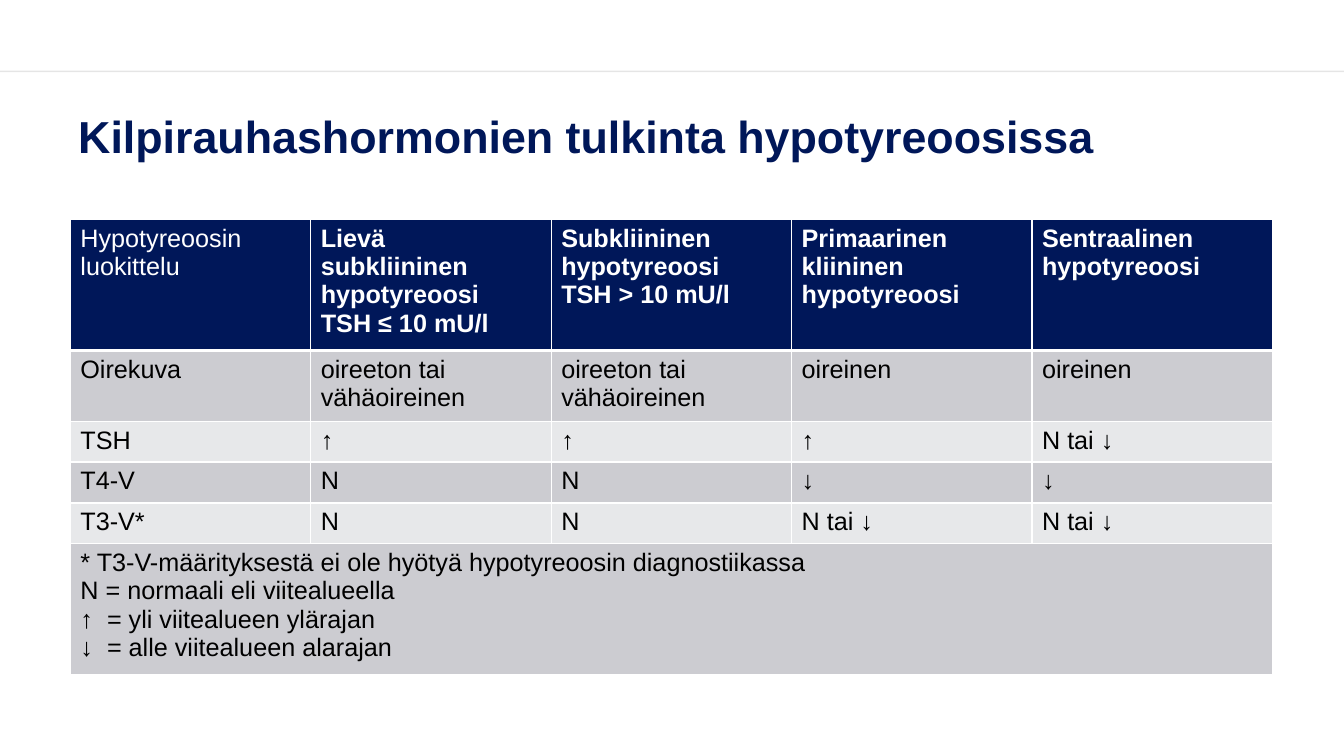
from dataclasses import dataclass

from lxml.etree import SubElement
from pptx import Presentation
from pptx.dml.color import RGBColor
from pptx.enum.shapes import MSO_CONNECTOR
from pptx.enum.text import MSO_ANCHOR
from pptx.oxml.ns import qn
from pptx.util import Pt

PX = 9525


@dataclass(frozen=True)
class Theme:
    """Colours, font and type sizes of the slide."""
    font: str = "Arial"
    navy: str = "001759"
    white: str = "FFFFFF"
    black: str = "000000"
    bands: tuple = ("E7E8EA", "CCCCD1")
    title: int = 32
    body: int = 18
    rule_opacity: int = 10


THEME = Theme()
TITLE = "Kilpirauhashormonien tulkinta hypotyreoosissa"
ROWS = [
    ["Hypotyreoosin luokittelu",
     "Lievä\nsubkliininen\nhypotyreoosi\nTSH ≤ 10 mU/l",
     "Subkliininen\nhypotyreoosi\nTSH > 10 mU/l",
     "Primaarinen kliininen\nhypotyreoosi",
     "Sentraalinen\nhypotyreoosi"],
    ["Oirekuva", "oireeton tai\nvähäoireinen", "oireeton tai\nvähäoireinen",
     "oireinen", "oireinen"],
    ["TSH", "↑", "↑", "↑", "N tai ↓"],
    ["T4-V", "N", "N", "↓", "↓"],
    ["T3-V*", "N", "N", "N tai ↓", "N tai ↓"],
    ["* T3-V-määrityksestä ei ole hyötyä hypotyreoosin diagnostiikassa\n"
     "N = normaali eli viitealueella\n"
     "↑  = yli viitealueen ylärajan\n"
     "↓  = alle viitealueen alarajan"],
]
ROW_HEIGHTS = [116, 63, 39, 39, 39, 117]


def style_runs(p, size, color, bold):
    """Format every run of a paragraph."""
    for r in p.runs:
        r.font.name = THEME.font
        r.font.size = Pt(size)
        r.font.bold = bold
        r.font.color.rgb = RGBColor.from_string(color)


def add_rule(s, x, y, w):
    """Draw the faint line across the top of the slide."""
    rule = s.shapes.add_connector(MSO_CONNECTOR.STRAIGHT, x * PX, y * PX, (x + w) * PX, y * PX)
    rule.line.width = Pt(1)
    rule.line.color.rgb = RGBColor.from_string(THEME.black)
    color = rule.line._ln.find(".//" + qn("a:srgbClr"))
    SubElement(color, qn("a:alpha"), val=str(THEME.rule_opacity * 1000))
    SubElement(rule._element.spPr, qn("a:effectLst"))


def add_title(s, x, y, w, h):
    """Place the slide title, centred vertically in its box."""
    tf = s.shapes.add_textbox(x * PX, y * PX, w * PX, h * PX).text_frame
    tf.word_wrap = True
    tf.vertical_anchor = MSO_ANCHOR.MIDDLE
    p = tf.paragraphs[0]
    p.text = TITLE
    p.line_spacing = 0.9
    style_runs(p, THEME.title, THEME.navy, True)


def set_borders(cell, top, bottom):
    """Give a cell white borders, with top and bottom widths in points."""
    tc_pr = cell._tc.get_or_add_tcPr()
    for side, width in (("L", 1), ("R", 1), ("T", top), ("B", bottom)):
        ln = SubElement(tc_pr, qn(f"a:ln{side}"), w=str(Pt(width)))
        SubElement(SubElement(ln, qn("a:solidFill")), qn("a:srgbClr"), val=THEME.white)


def add_hormone_table(s, x, y, w):
    """Build the table with a dark header, banded rows and a merged note row."""
    n_rows, n_cols = len(ROWS), len(ROWS[0])
    table = s.shapes.add_table(n_rows, n_cols, x * PX, y * PX, w * PX,
                               sum(ROW_HEIGHTS) * PX).table
    for col in table.columns:
        col.width = w // n_cols * PX
    for i, (row, height) in enumerate(zip(table.rows, ROW_HEIGHTS)):
        row.height = height * PX
        header = i == 0
        for j, cell in enumerate(row.cells):
            set_borders(cell, 3 if i == 1 else 1, 3 if header else 1)
            cell.fill.solid()
            cell.fill.fore_color.rgb = RGBColor.from_string(
                THEME.navy if header else THEME.bands[i % 2])
            if j < len(ROWS[i]):
                p = cell.text_frame.paragraphs[0]
                p.text = ROWS[i][j].replace("\n", "\v")
                style_runs(p, THEME.body, THEME.white if header else THEME.black,
                           header and j > 0)
    table.cell(n_rows - 1, 0).merge(table.cell(n_rows - 1, n_cols - 1))


def main():
    """Build and save the slide."""
    prs = Presentation()
    prs.slide_width, prs.slide_height = 1280 * PX, 720 * PX
    s = prs.slides.add_slide(prs.slide_layouts[6])
    add_rule(s, 0, 68, 1280)
    add_title(s, 65, 89, 1146, 87)
    add_hormone_table(s, 67, 209, 1145)
    prs.save("out.pptx")


if __name__ == "__main__":
    main()
